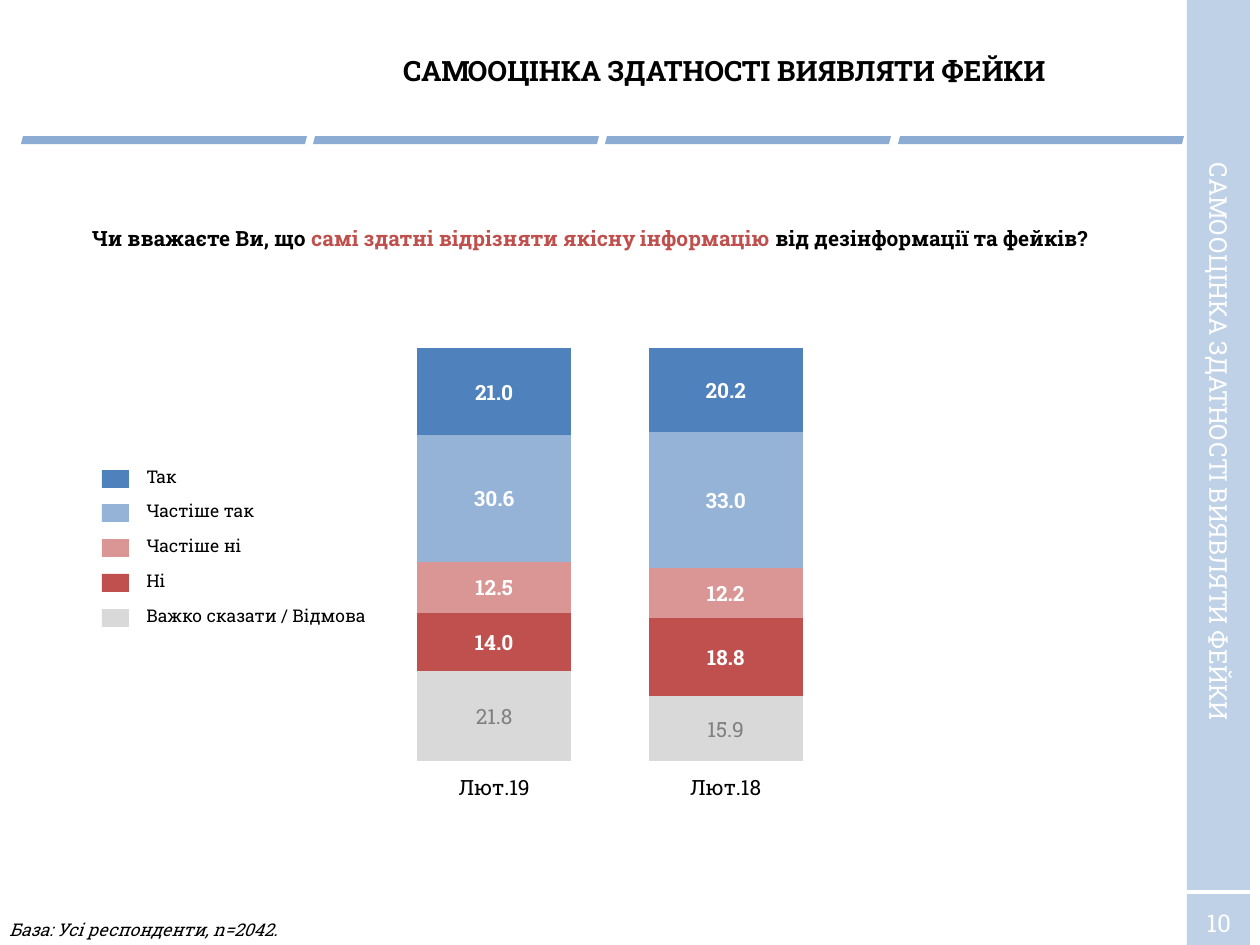
from lxml import etree
from pptx import Presentation
from pptx.chart.data import CategoryChartData
from pptx.dml.color import RGBColor
from pptx.enum.chart import XL_CHART_TYPE, XL_TICK_MARK
from pptx.enum.shapes import MSO_CONNECTOR, MSO_SHAPE
from pptx.enum.text import MSO_ANCHOR, PP_ALIGN
from pptx.oxml import parse_xml
from pptx.oxml.ns import nsdecls, qn
from pptx.util import Pt

SCALE = 914400 / 126
FONT = "Roboto Slab"
TITLE = "САМООЦІНКА ЗДАТНОСТІ ВИЯВЛЯТИ ФЕЙКИ"

BLACK = RGBColor(0x00, 0x00, 0x00)
WHITE = RGBColor(0xFF, 0xFF, 0xFF)
BLUE = RGBColor(0x4F, 0x81, 0xBD)
SKY = RGBColor(0x95, 0xB3, 0xD7)
PINK = RGBColor(0xD9, 0x96, 0x94)
RED = RGBColor(0xC0, 0x50, 0x4D)
PALE = RGBColor(0xD9, 0xD9, 0xD9)
GREY = RGBColor(0x80, 0x80, 0x80)

MONTHS = ["Лют.19", "Лют.18"]
ANSWERS = [
    ("Так", BLUE, (21.0, 20.2), 212),
    ("Частіше так", SKY, (30.6, 33.0), 212),
    ("Частіше ні", PINK, (12.5, 12.2), 212),
    ("Ні", RED, (14.0, 18.8), 212),
    ("Важко сказати / Відмова", PALE, (21.8, 15.9), 256),
]


def px(*sizes):
    return [round(size * SCALE) for size in sizes]


def style(font, size, color, bold=False, italic=False):
    font.name = FONT
    font.size = Pt(size)
    font.bold = bold
    font.italic = italic
    font.color.rgb = color


def add_block(slide, kind, box, color, alpha=100):
    block = slide.shapes.add_shape(kind, *px(*box))
    block.shadow.inherit = False
    block.fill.solid()
    block.fill.fore_color.rgb = color
    block.line.fill.background()
    if alpha < 100:
        tint = block.fill._xPr.find(qn("a:solidFill"))[0]
        etree.SubElement(tint, qn("a:alpha")).set("val", str(alpha * 1000))


def add_text(slide, box, parts, size, align=PP_ALIGN.CENTER,
             anchor=MSO_ANCHOR.TOP, bold=False, italic=False, turn=0):
    label = slide.shapes.add_textbox(*px(*box))
    label.rotation = turn
    frame = label.text_frame
    frame.word_wrap = True
    frame.vertical_anchor = anchor
    para = frame.paragraphs[0]
    para.alignment = align
    for text, color in parts:
        run = para.add_run()
        run.text = text
        style(run.font, size, color, bold, italic)


def add_rule(slide, start, end, color, width):
    rule = slide.shapes.add_connector(
        MSO_CONNECTOR.STRAIGHT, *px(*start), *px(*end))
    rule.line.color.rgb = color
    rule.line.width = Pt(width)
    etree.SubElement(rule._element.spPr, qn("a:effectLst"))


def set_plot(chart, x, y, width, height):
    area = chart._chartSpace.chart.plotArea
    for old in area.findall(qn("c:layout")):
        area.remove(old)
    area.insert(0, parse_xml(
        f'<c:layout {nsdecls("c")}><c:manualLayout>'
        '<c:layoutTarget val="inner"/>'
        '<c:xMode val="edge"/><c:yMode val="edge"/>'
        f'<c:x val="{x}"/><c:y val="{y}"/>'
        f'<c:w val="{width}"/><c:h val="{height}"/>'
        '</c:manualLayout></c:layout>'))


def add_bars(slide, box):
    stack = ANSWERS[::-1]
    data = CategoryChartData(number_format="0.0")
    data.categories = MONTHS
    for name, _, values, _ in stack:
        data.add_series(name, values)
    chart = slide.shapes.add_chart(
        XL_CHART_TYPE.COLUMN_STACKED_100, *px(*box), data).chart
    chart.has_legend = False
    chart.has_title = False
    style(chart.font, 12, BLACK)
    set_plot(chart, 0.05, 0.05, 0.91, 0.85)
    chart.value_axis.visible = False
    chart.value_axis.has_major_gridlines = False
    chart.category_axis.major_tick_mark = XL_TICK_MARK.OUTSIDE
    chart.category_axis.format.line.fill.background()
    plot = chart.plots[0]
    plot.gap_width = 50
    plot.overlap = 100
    plot.vary_by_categories = False
    for series, (_, color, _, _) in zip(plot.series, stack):
        series.format.fill.solid()
        series.format.fill.fore_color.rgb = color
        labels = series.data_labels
        labels.show_value = True
        labels.number_format = "0.0"
        labels.number_format_is_linked = False
        faint = color == PALE
        style(labels.font, 12, GREY if faint else WHITE, bold=not faint)


def add_key(slide):
    for row, (name, color, _, width) in enumerate(ANSWERS):
        drop = row * 139 // 4
        add_block(slide, MSO_SHAPE.RECTANGLE, (102, 470 + drop, 27, 18), color)
        add_text(slide, (134, 460 + drop, width, 34), [(name, BLACK)], 10,
                 align=PP_ALIGN.LEFT)


def add_frame(slide):
    add_block(slide, MSO_SHAPE.RECTANGLE, (1187, 0, 63, 945), SKY, 60)
    for step in range(4):
        left = 21 + step * 877 // 3
        add_block(slide, MSO_SHAPE.PARALLELOGRAM, (left, 136, 286, 8), BLUE, 65)
    add_text(slide, (1182, 901, 74, 43), [("10", WHITE)], 14,
             anchor=MSO_ANCHOR.MIDDLE)
    add_rule(slide, (1187, 892), (1250, 892), WHITE, 2)


def main():
    deck = Presentation()
    deck.slide_width, deck.slide_height = px(1260, 945)
    slide = deck.slides.add_slide(deck.slide_layouts[6])
    add_frame(slide)
    add_text(slide, (273, 23, 903, 95), [(TITLE, BLACK)], 16,
             anchor=MSO_ANCHOR.MIDDLE, bold=True)
    add_text(slide, (872, 420, 693, 43), [(TITLE, WHITE)], 14, turn=90)
    add_text(slide, (-3, 913, 1187, 34),
             [("База: Усі респонденти, n=2042.", BLACK)], 10,
             align=PP_ALIGN.LEFT, italic=True)
    add_text(slide, (79, 219, 1022, 63), [
        ("Чи вважаєте Ви, що ", BLACK),
        ("самі здатні відрізняти якісну інформацію ", RED),
        ("від дезінформації та фейків?", BLACK),
    ], 12, bold=True)
    add_bars(slide, (353, 324, 509, 486))
    add_key(slide)
    deck.save("out.pptx")


if __name__ == "__main__":
    main()
